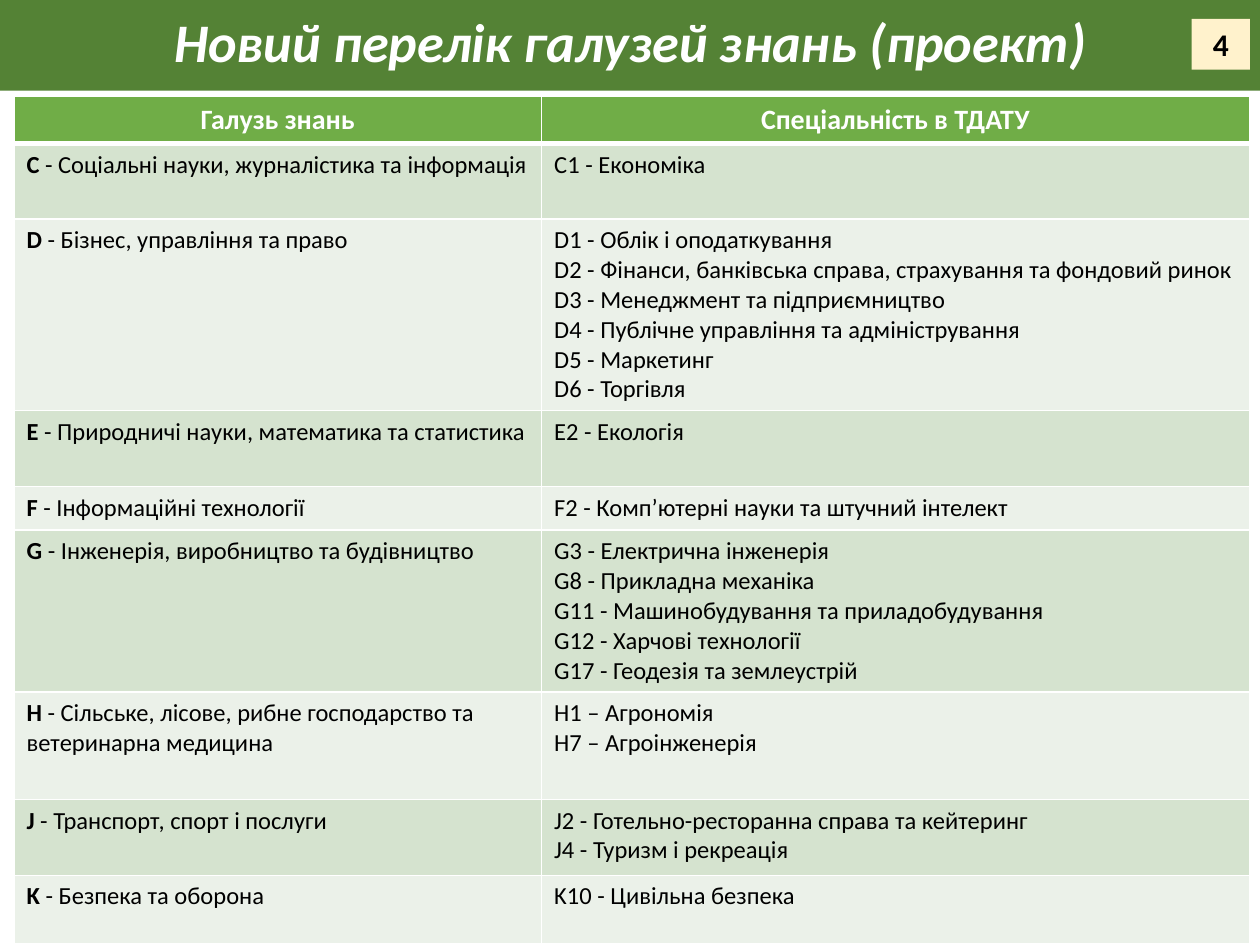
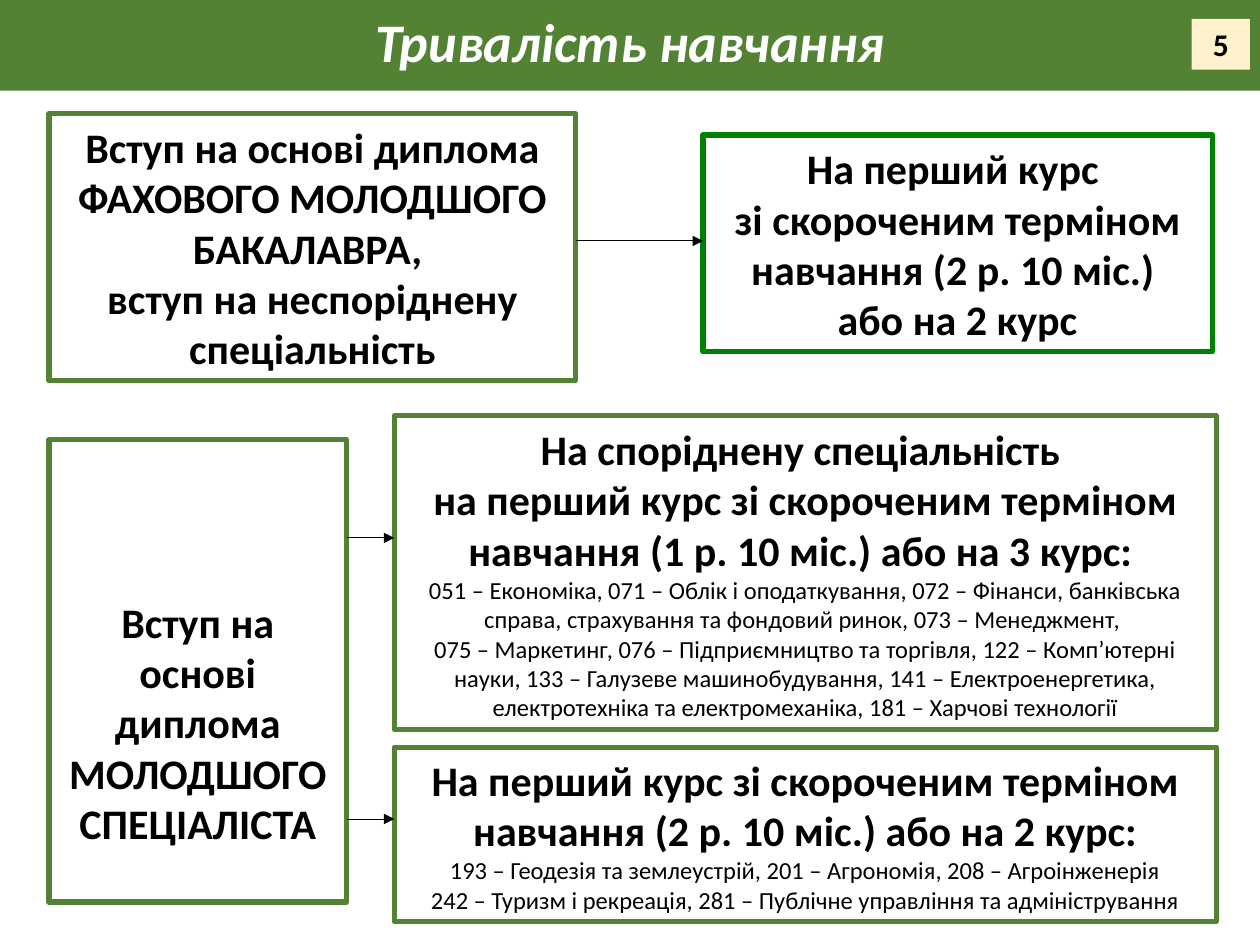
import pptx
import pptx.util
import pptx.dml.color
import pptx.enum.shapes
import pptx.enum.text
import pptx.oxml
import pptx.oxml.ns
from lxml import etree
from collections import namedtuple

Pt = pptx.util.Pt
RGBColor = pptx.dml.color.RGBColor
qn = pptx.oxml.ns.qn
PP_ALIGN = pptx.enum.text.PP_ALIGN
RECTANGLE = pptx.enum.shapes.MSO_SHAPE.RECTANGLE

DARK_GREEN = RGBColor(0x54, 0x82, 0x35)
PURE_GREEN = RGBColor(0x00, 0x80, 0x00)
HEADER_GREEN = RGBColor(0x70, 0xAD, 0x47)
ROW_TINTS = (RGBColor(0xD5, 0xE3, 0xCF), RGBColor(0xEB, 0xF1, 0xE9))
CREAM = RGBColor(0xFF, 0xF2, 0xCC)
WHITE = RGBColor(0xFF, 0xFF, 0xFF)
BLACK = RGBColor(0x00, 0x00, 0x00)
FONT = "Calibri"

Box = namedtuple("Box", "left top width height")  # all in points
PAGE = Box(0, 0, 720, 540)
BODY = Box(0, 52, 720, 488)

FIELDS = [  # letter, field name, specialities, row height
    ("C", "Соціальні науки, журналістика та інформація", ["C1 - Економіка"], 43.3),
    ("D", "Бізнес, управління та право",
     ["D1 - Облік і оподаткування",
      "D2 - Фінанси, банківська справа, страхування та фондовий ринок",
      "D3 - Менеджмент та підприємництво",
      "D4 - Публічне управління та адміністрування",
      "D5 - Маркетинг",
      "D6 - Торгівля"], 105.4),
    ("E", "Природничі науки, математика та статистика", ["E2 - Екологія"], 43.3),
    ("F", "Інформаційні технології",
     ["F2 - Комп’ютерні науки та штучний інтелект"], 25),
    ("G", "Інженерія, виробництво та будівництво",
     ["G3 - Електрична інженерія",
      "G8 - Прикладна механіка",
      "G11 - Машинобудування та приладобудування",
      "G12 - Харчові технології",
      "G17 - Геодезія та землеустрій"], 88.7),
    ("H", "Сільське, лісове, рибне господарство та ветеринарна медицина",
     ["H1 – Агрономія", "H7 – Агроінженерія"], 61.5),
    ("J", "Транспорт, спорт і послуги",
     ["J2 - Готельно-ресторанна справа та кейтеринг",
      "J4 - Туризм і рекреація"], 43.3),
    ("K", "Безпека та оборона", ["K10 - Цивільна безпека"], 39.4),
]


def style_paragraph(paragraph, size, color=BLACK, bold=False, italic=False, align=None):
    paragraph.alignment = align
    for run in paragraph.runs:
        font = run.font
        font.name, font.size, font.bold, font.italic = FONT, Pt(size), bold, italic
        font.color.rgb = color


def add_rectangle(slide, box, fill=None, outline=None):
    rectangle = slide.shapes.add_shape(RECTANGLE, *map(Pt, box))
    rectangle.shadow.inherit = False
    if fill is None:
        rectangle.fill.background()
    else:
        rectangle.fill.solid()
        rectangle.fill.fore_color.rgb = fill
    if outline is None:
        rectangle.line.fill.background()
    else:
        rectangle.line.color.rgb = outline
        rectangle.line.width = Pt(3)
    rectangle.text_frame.word_wrap = True
    rectangle.text_frame.vertical_anchor = pptx.enum.text.MSO_ANCHOR.MIDDLE
    return rectangle


def add_title_band(slide, page, title, number):
    """Green band with the slide title and the number badge."""
    band = add_rectangle(slide, Box(page.left, page.top - 0.7, page.width, 52.5), DARK_GREEN)
    band.text_frame.text = title
    heading = band.text_frame.paragraphs[0]
    heading.line_spacing = 0.9
    style_paragraph(heading, 31, WHITE, bold=True, italic=True, align=PP_ALIGN.CENTER)

    badge = add_rectangle(
        slide, Box(page.left + page.width - 39, page.top + 10.8, 33.2, 29), CREAM)
    badge.text_frame.text = str(number)
    style_paragraph(badge.text_frame.paragraphs[0], 18, bold=True, align=PP_ALIGN.CENTER)


def paint_cell(cell, fill, bottom=1, top=1):
    """White borders, then the fill: the order the cell properties need."""
    properties = cell._tc.get_or_add_tcPr()
    for side, width in (("L", 1), ("R", 1), ("T", top), ("B", bottom)):
        border = etree.SubElement(properties, qn(f"a:ln{side}"), w=str(Pt(width)))
        paint = etree.SubElement(border, qn("a:solidFill"))
        etree.SubElement(paint, qn("a:srgbClr"), val=str(WHITE))
    cell.fill.solid()
    cell.fill.fore_color.rgb = fill


def add_fields_table(slide, body):
    """Fields of knowledge on the left, their specialities on the right."""
    heights = [25.7] + [field[3] for field in FIELDS]
    widths = (301.5, 404.5)
    table = slide.shapes.add_table(
        len(heights), len(widths), Pt(body.left + 8), Pt(body.top + 3.2),
        Pt(sum(widths)), Pt(sum(heights))).table
    for column, width in zip(table.columns, widths):
        column.width = Pt(width)
    for row, height in zip(table.rows, heights):
        row.height = Pt(height)

    # Header row
    for column, caption in enumerate(("Галузь знань", "Спеціальність в ТДАТУ")):
        cell = table.cell(0, column)
        cell.text_frame.text = caption
        style_paragraph(cell.text_frame.paragraphs[0], 16, WHITE, bold=True,
                        align=PP_ALIGN.CENTER)
        paint_cell(cell, HEADER_GREEN, bottom=3)

    # One row for each field
    for row, (letter, name, specialities, _) in enumerate(FIELDS, start=1):
        field_cell, speciality_cell = table.cell(row, 0), table.cell(row, 1)
        field = field_cell.text_frame.paragraphs[0]
        for part in (letter, f" - {name}"):
            field.add_run().text = part
        style_paragraph(field, 14)
        field.runs[0].font.bold = True

        speciality_cell.text_frame.text = "\n".join(specialities)
        for paragraph in speciality_cell.text_frame.paragraphs:
            style_paragraph(paragraph, 14)
        for cell in (field_cell, speciality_cell):
            paint_cell(cell, ROW_TINTS[(row - 1) % 2], top=3 if row == 1 else 1)


def add_step(slide, box, headline, details=(), outline=DARK_GREEN):
    """Outlined box: bold headline lines, then smaller details."""
    frame = add_rectangle(slide, box, outline=outline).text_frame
    frame.text = "\n".join([*headline, *details])
    for index, paragraph in enumerate(frame.paragraphs):
        is_headline = index < len(headline)
        style_paragraph(paragraph, 24 if is_headline else 14, bold=is_headline,
                        align=PP_ALIGN.CENTER)
    return frame


def add_arrow(slide, source, target, y):
    """Horizontal arrow from the right side of source to the left side of target."""
    arrow = slide.shapes.add_connector(
        pptx.enum.shapes.MSO_CONNECTOR.STRAIGHT,
        Pt(source.left + source.width), Pt(y), Pt(target.left), Pt(y))
    arrow.line.color.rgb = BLACK
    arrow.line.width = Pt(0.5)
    etree.SubElement(arrow.line._get_or_add_ln(), qn("a:tailEnd"), type="triangle")
    etree.SubElement(arrow._element.spPr, qn("a:effectLst"))


def add_bachelor_route(slide, area):
    """Entry with a professional junior bachelor diploma."""
    entry = Box(area.left, area.top, 301, 152.6)
    outcome = Box(area.left + 373.7, area.top + 12.2, 291, 123.8)
    add_step(slide, entry, ["Вступ на основі диплома ФАХОВОГО МОЛОДШОГО БАКАЛАВРА, ",
                            "вступ на неспоріднену спеціальність"])
    add_step(slide, outcome, ["На перший курс ",
                              "зі скороченим терміном навчання (2 р. 10 міс.) ",
                              "або на 2 курс"], outline=PURE_GREEN)
    add_arrow(slide, entry, outcome, area.top + 72.7)


def add_specialist_route(slide, area):
    """Entry with a junior specialist diploma, with two outcomes."""
    entry = Box(area.left, area.top + 13.7, 170, 264.2)
    outcome_left, outcome_width = area.left + 197.3, area.width - 197.3
    related = Box(outcome_left, area.top, outcome_width, 179.3)
    second_year = Box(outcome_left, area.top + 189.4, outcome_width, 99.4)

    entry_frame = add_step(slide, entry, ["Вступ на основі диплома МОЛОДШОГО СПЕЦІАЛІСТА"])
    entry_frame.margin_top = Pt(62)
    add_step(slide, related,
             ["На споріднену спеціальність ",
              "на перший курс зі скороченим терміном навчання (1 р. 10 міс.) або на 3 курс: "],
             ["051 – Економіка, 071 – Облік і оподаткування, 072 – Фінанси, банківська "
              "справа, страхування та фондовий ринок, 073 – Менеджмент, ",
              "075 – Маркетинг, 076 – Підприємництво та торгівля, 122 – Комп’ютерні науки, "
              "133 – Галузеве машинобудування, 141 – Електроенергетика, електротехніка та "
              "електромеханіка, 181 – Харчові технології"])
    add_step(slide, second_year,
             ["На перший курс зі скороченим терміном навчання (2 р. 10 міс.) або на 2 курс:"],
             ["193 – Геодезія та землеустрій, 201 – Агрономія, 208 – Агроінженерія",
              "242 – Туризм і рекреація, 281 – Публічне управління та адміністрування"])
    add_arrow(slide, entry, related, area.top + 69.8)
    add_arrow(slide, entry, second_year, area.top + 230.4)


def main():
    deck = pptx.Presentation()
    deck.slide_width, deck.slide_height = Pt(PAGE.width), Pt(PAGE.height)
    blank = deck.slide_layouts[6]

    # Fields of knowledge
    fields_slide = deck.slides.add_slide(blank)
    add_title_band(fields_slide, PAGE, "Новий перелік галузей знань (проект)", 4)
    add_fields_table(fields_slide, BODY)

    # Length of study
    duration_slide = deck.slides.add_slide(blank)
    add_title_band(duration_slide, PAGE, "Тривалість навчання", 5)
    left, width = BODY.left + 28, BODY.width - 53
    add_bachelor_route(duration_slide, Box(left, BODY.top + 13, width, 153))
    add_specialist_route(duration_slide, Box(left, BODY.top + 185.6, width, 289))

    deck.save("out.pptx")


if __name__ == "__main__":
    main()
